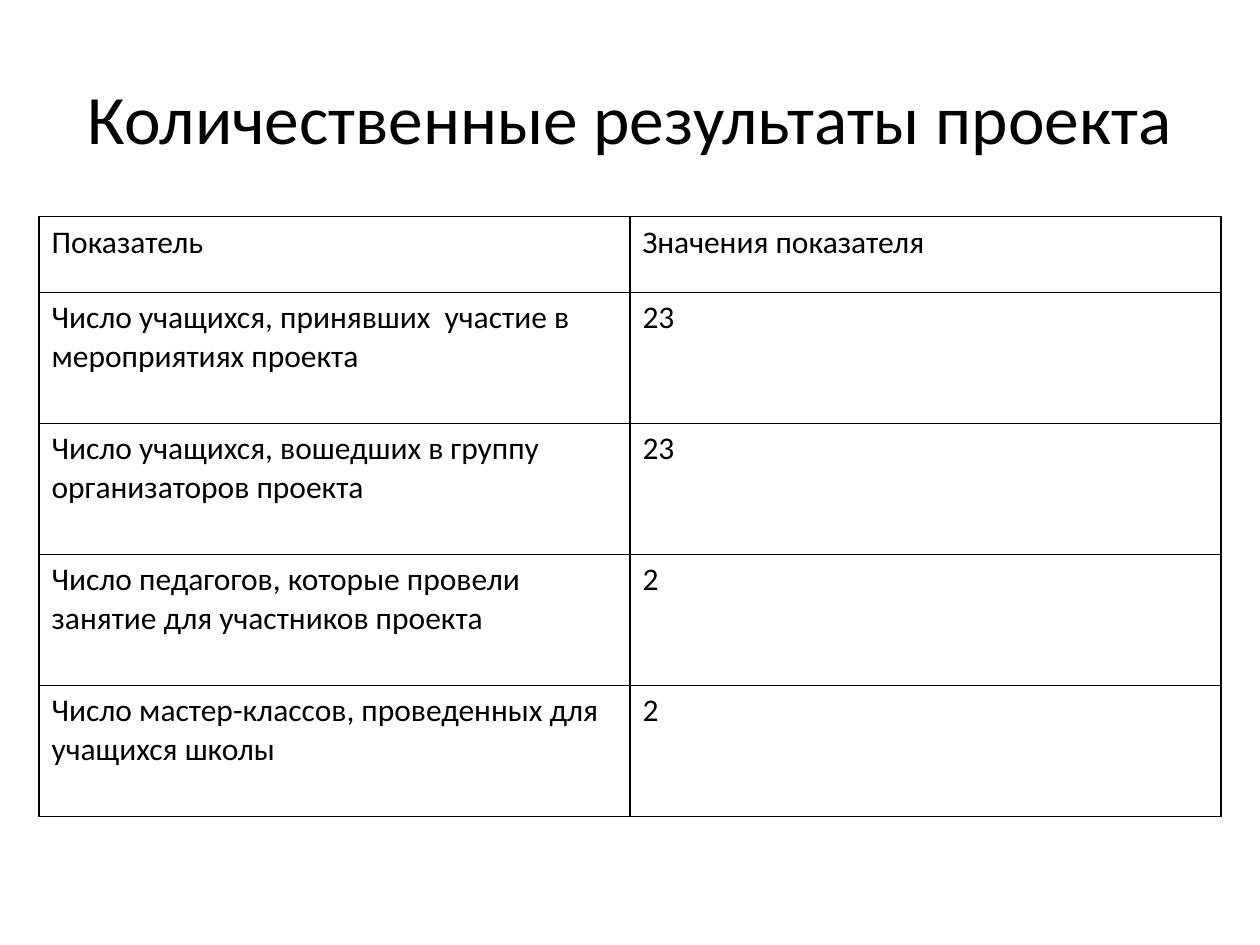
from lxml.etree import SubElement
from pptx import Presentation
from pptx.dml.color import RGBColor
from pptx.enum.text import MSO_ANCHOR as Anchor, PP_ALIGN as Align
from pptx.oxml.ns import qn
from pptx.util import Inches, Pt

TITLE = "Количественные результаты проекта"
ROWS = [
    ("Показатель", "Значения показателя"),
    ("Число учащихся, принявших  участие в мероприятиях проекта", "23"),
    ("Число учащихся, вошедших в группу организаторов проекта", "23"),
    ("Число педагогов, которые провели занятие для участников проекта", "2"),
    ("Число мастер-классов, проведенных для учащихся школы", "2"),
]
COLORS = {"text": "000000", "border": "000000", "background": "FFFFFF"}
FONT = "Calibri"
HEADER_HEIGHT, ROW_HEIGHT, COLUMN_WIDTH = 0.6, 1.04, 4.69


def write(para, text, size):
    span = para.add_run()
    span.text = text
    span.font.name = FONT
    span.font.size = Pt(size)
    span.font.color.rgb = RGBColor.from_string(COLORS["text"])


def add_borders(cell):
    props = cell._tc.get_or_add_tcPr()
    # Borders must come before the fill in the cell properties
    for index, side in enumerate(("a:lnL", "a:lnR", "a:lnT", "a:lnB")):
        line = SubElement(props, qn(side), w=str(Pt(1)))
        fill = SubElement(line, qn("a:solidFill"))
        SubElement(fill, qn("a:srgbClr"), val=COLORS["border"])
        props.insert(index, line)


def add_title(page):
    box = page.shapes.add_textbox(Inches(0.5), Inches(0.3), Inches(9), Inches(1.25))
    frame = box.text_frame
    frame.word_wrap = True
    frame.vertical_anchor = Anchor.MIDDLE
    para = frame.paragraphs[0]
    para.alignment = Align.CENTER
    write(para, TITLE, 39.6)


def add_results(page):
    heights = [HEADER_HEIGHT] + [ROW_HEIGHT] * (len(ROWS) - 1)
    columns = len(ROWS[0])
    table = page.shapes.add_table(
        len(ROWS), columns, Inches(0.31), Inches(1.72),
        Inches(COLUMN_WIDTH * columns), Inches(sum(heights))).table
    table.horz_banding = False
    for column in table.columns:
        column.width = Inches(COLUMN_WIDTH)
    for row, height, texts in zip(table.rows, heights, ROWS):
        row.height = Inches(height)
        for cell, text in zip(row.cells, texts):
            cell.fill.background()
            add_borders(cell)
            write(cell.text_frame.paragraphs[0], text, 18)


def main():
    deck = Presentation()
    deck.slide_width, deck.slide_height = Inches(10), Inches(7.5)
    page = deck.slides.add_slide(deck.slide_layouts[6])
    page.background.fill.solid()
    page.background.fill.fore_color.rgb = RGBColor.from_string(COLORS["background"])
    add_title(page)
    add_results(page)
    deck.save("out.pptx")


if __name__ == "__main__":
    main()
